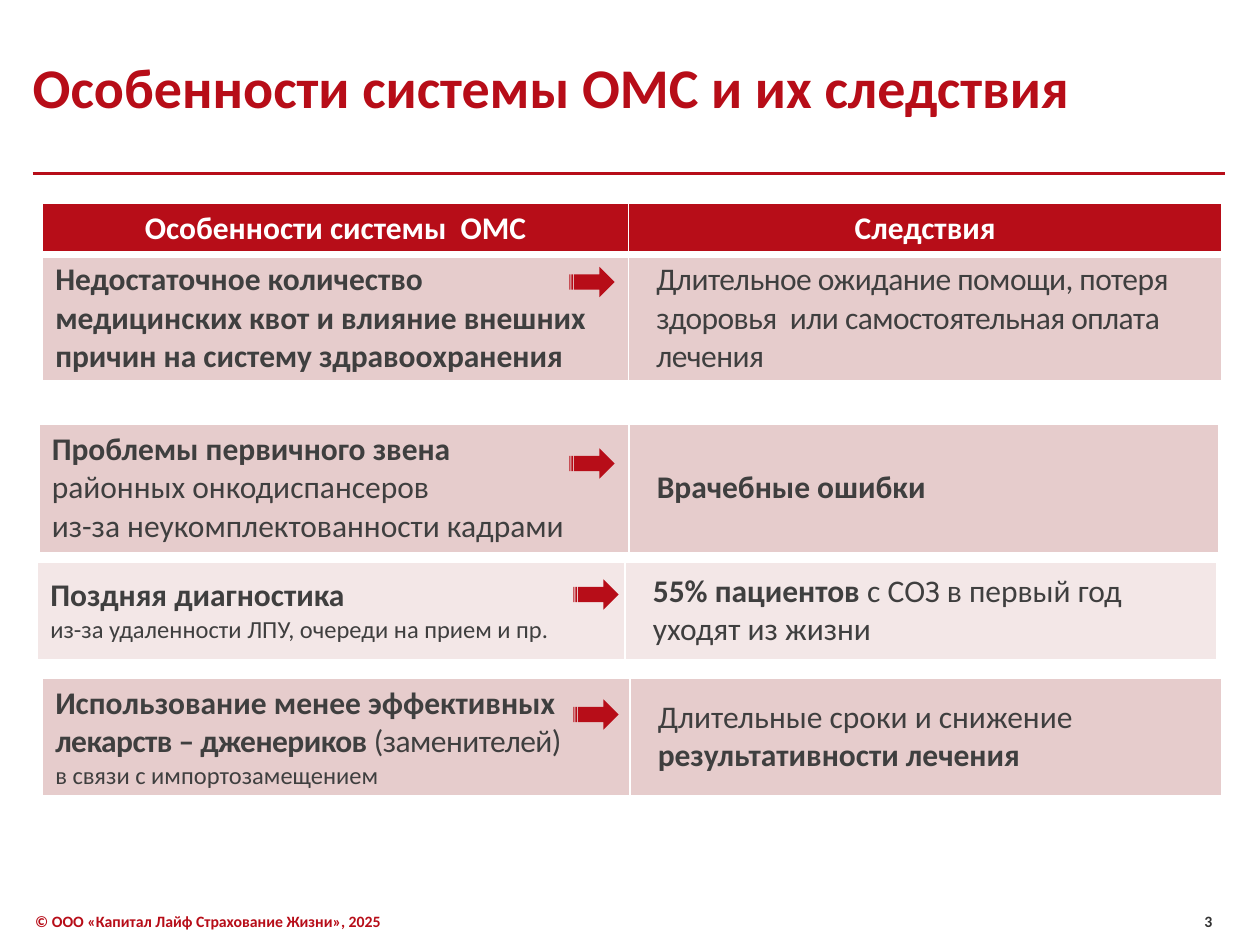
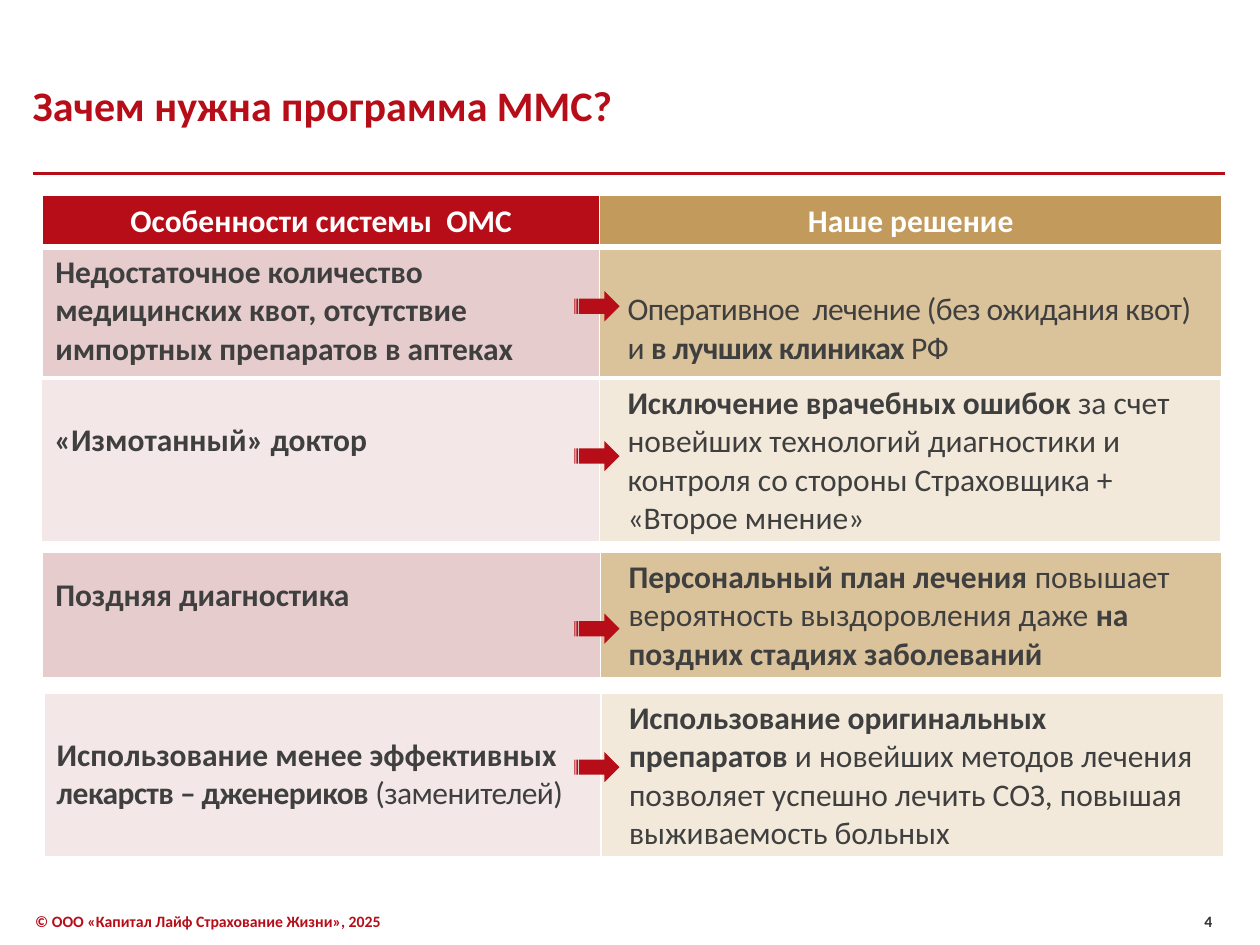
from lxml.etree import SubElement
from pptx import Presentation
from pptx.dml.color import RGBColor
from pptx.enum.shapes import MSO_CONNECTOR, MSO_SHAPE
from pptx.enum.text import MSO_ANCHOR as Anchor, PP_ALIGN as Align
from pptx.oxml.ns import qn
from pptx.util import Cm, Pt

# Shared palette and measures (cm)
RED, GOLD, WHITE = "B70D18", "C29A5B", "FFFFFF"
ROSE, PALE_ROSE = "E6CCCC", "F3E7E7"
SAND, PALE_SAND = "DAC29A", "F2E9DB"
DARK, NUMBER_GREY = "3F3F3F", "323232"
TABLE_WIDTH, HEADER_HEIGHT = 23.77, 1.04
COPYRIGHT = "© ООО «Капитал Лайф Страхование Жизни», 2025"


def rgb(value):
    return RGBColor.from_string(value)


def write(paragraph, pieces, color, size=18):
    """Pieces are (text, style); style letters: b bold, s small, t tight."""
    for text, style in pieces:
        for index, line in enumerate(text.split("\n")):
            if index:
                paragraph.add_line_break()
            if not line:
                continue
            run = paragraph.add_run()
            run.text = line
            run.font.name = "Calibri"
            run.font.size = Pt(14 if "s" in style else size)
            run.font.bold = "b" in style
            run.font.color.rgb = rgb(color)
            if "t" in style:
                run.font._element.set("spc", "-30")


# Each block: left, top, first column, body height, top border in points,
# arrow place, fills, and for each of the two cells a list of paragraphs
oms_blocks = [
    (0.86, 4.09, 11.81, 2.54, 4.5, (11.48, 5.38), (ROSE, ROSE),
     [[("Недостаточное количество медицинских квот и влияние внешних "
        "причин на систему здравоохранения", "b")]],
     [[("Длительное ожидание помощи, потеря здоровья  или "
        "самостоятельная оплата лечения", "t")]]),
    (0.79, 8.53, 11.89, 2.62, 3, (11.48, 9.04), (ROSE, ROSE),
     [[("Проблемы первичного звена", "b")],
      [("районных онкодиспансеров\nиз-за неукомплектованности кадрами", "")]],
     [[("Врачебные ошибки", "b")]]),
    (0.76, 11.33, 11.84, 1.96, 1, (11.56, 11.68), (PALE_ROSE, PALE_ROSE),
     [[("Поздняя диагностика\n", "b"),
       ("из-за удаленности ЛПУ, очереди на прием и пр.", "s")]],
     [[("55% пациентов ", "b"), ("с СОЗ в первый год уходят из жизни", "")]]),
    (0.86, 13.67, 11.84, 2.36, 1, (11.56, 14.1), (ROSE, ROSE),
     [[("Использование менее эффективных ", "b"),
       ("лекарств – дженериков ", "bt"), ("(заменителей)", "t")],
      [("в связи с импортозамещением", "s")]],
     [[("Длительные сроки и снижение ", ""),
       ("результативности лечения", "b")]]),
]
solution_blocks = [
    (0.86, 3.94, 11.23, 3.12, 4.5, (11.58, 5.87), (ROSE, SAND),
     [[("Недостаточное количество медицинских квот, отсутствие "
        "импортных препаратов в аптеках\n", "b")]],
     [[("Оперативное  лечение (без ожидания квот) и ", "t"),
       ("в лучших клиниках", "bt"), (" РФ", "t")]]),
    (0.84, 7.62, 11.25, 3.3, 3, (11.58, 8.89), (PALE_ROSE, PALE_SAND),
     [[("«Измотанный» доктор\n", "b")]],
     [[("Исключение врачебных ошибок ", "b"),
       ("за счет новейших технологий диагностики и контроля со стороны "
        "Страховщика + «Второе мнение»", "")]]),
    (0.86, 11.13, 11.25, 2.54, 1, (11.58, 12.37), (ROSE, SAND),
     [[("Поздняя диагностика\n", "b")]],
     [[("Персональный план лечения ", "b"),
       ("повышает вероятность выздоровления даже ", ""),
       ("на поздних стадиях заболеваний", "b")]]),
    (0.89, 13.97, 11.23, 3.3, 1, (11.58, 15.16), (PALE_ROSE, PALE_SAND),
     [[("Использование менее эффективных ", "b"),
       ("лекарств – дженериков ", "bt"), ("(заменителей)", "t")]],
     [[("Использование оригинальных препаратов ", "b"),
       ("и новейших методов лечения позволяет успешно лечить СОЗ, "
        "повышая выживаемость больных", "")]]),
]
# Title, its size, top and height, page number, headings, blocks
pages = [
    ("Особенности системы ОМС и их следствия", 32, 0.56, 2.36, "3",
     [("Особенности системы  ОМС", RED), ("Следствия", RED)], oms_blocks),
    ("Зачем нужна программа ММС?", 24, 1.22, 1.8, "4",
     [("Особенности системы  ОМС", RED), ("Наше решение", GOLD)],
     solution_blocks),
]

deck = Presentation()
deck.slide_width, deck.slide_height = Cm(25.4), Cm(19.05)

for title, title_size, title_top, title_height, number, headings, blocks in pages:
    slide = deck.slides.add_slide(deck.slide_layouts[6])

    # Rule under the title
    rule = slide.shapes.add_connector(
        MSO_CONNECTOR.STRAIGHT, Cm(0.66), Cm(3.5), Cm(24.69), Cm(3.5))
    rule.line.color.rgb = rgb(RED)
    rule.line.width = Pt(1.5)
    SubElement(rule._element.spPr, qn("a:effectLst"))

    # Title, copyright line and page number
    for text, left, top, width, height, size, color, align, inset in [
        (title, 0.66, title_top, 21.2, title_height, title_size, RED, Align.LEFT, 0),
        (COPYRIGHT, 0.46, 18.26, 9.07, 0.64, 9, RED, Align.LEFT, 0.25),
        (number, 22.68, 18.26, 2.01, 0.64, 9, NUMBER_GREY, Align.RIGHT, 0.25),
    ]:
        frame = slide.shapes.add_textbox(
            Cm(left), Cm(top), Cm(width), Cm(height)).text_frame
        frame.word_wrap = True
        frame.margin_left = frame.margin_right = Cm(inset)
        if text == title:
            frame.margin_top = frame.margin_bottom = 0
            frame.vertical_anchor = Anchor.MIDDLE
        frame.paragraphs[0].alignment = align
        write(frame.paragraphs[0], [(text, "b")], color, size)

    # One table per block; the first one also carries the headings
    for position, block in enumerate(blocks):
        left, top, split, height, top_border, arrow_at, fills, *contents = block
        heights = [height] if position else [HEADER_HEIGHT, height]
        grid = slide.shapes.add_table(
            len(heights), 2, Cm(left), Cm(top), Cm(TABLE_WIDTH),
            Cm(sum(heights))).table
        grid.first_row = grid.horz_banding = False
        grid.columns[0].width = Cm(split)
        grid.columns[1].width = Cm(TABLE_WIDTH - split)
        for row, row_height in zip(grid.rows, heights):
            row.height = Cm(row_height)

        for row_index in range(len(heights)):
            is_header = len(heights) == 2 and row_index == 0
            for column in range(2):
                cell = grid.cell(row_index, column)
                cell.vertical_anchor = Anchor.MIDDLE
                borders = {"L": 1, "R": 1, "T": 1 if is_header else top_border,
                           "B": top_border if is_header else 1}
                for side, points in borders.items():
                    edge = SubElement(cell._tc.get_or_add_tcPr(),
                                      qn(f"a:ln{side}"), w=str(Pt(points)))
                    SubElement(SubElement(edge, qn("a:solidFill")),
                               qn("a:srgbClr"), val=WHITE)
                cell.fill.solid()
                frame = cell.text_frame
                if is_header:
                    heading, fill = headings[column]
                    cell.fill.fore_color.rgb = rgb(fill)
                    frame.paragraphs[0].alignment = Align.CENTER
                    write(frame.paragraphs[0], [(heading, "b")], WHITE)
                    continue
                cell.fill.fore_color.rgb = rgb(fills[column])
                if column:
                    cell.margin_left = Cm(0.56)
                else:
                    cell.margin_right = Cm(0.5)
                for index, pieces in enumerate(contents[column]):
                    paragraph = (frame.add_paragraph() if index
                                 else frame.paragraphs[0])
                    write(paragraph, pieces, DARK)

        # Arrow from the feature to its counterpart
        arrow = slide.shapes.add_shape(
            MSO_SHAPE.STRIPED_RIGHT_ARROW, Cm(arrow_at[0]), Cm(arrow_at[1]),
            Cm(0.91), Cm(0.61))
        arrow.shadow.inherit = False
        arrow.fill.solid()
        arrow.fill.fore_color.rgb = rgb(RED)
        arrow.line.fill.background()

deck.save("out.pptx")
